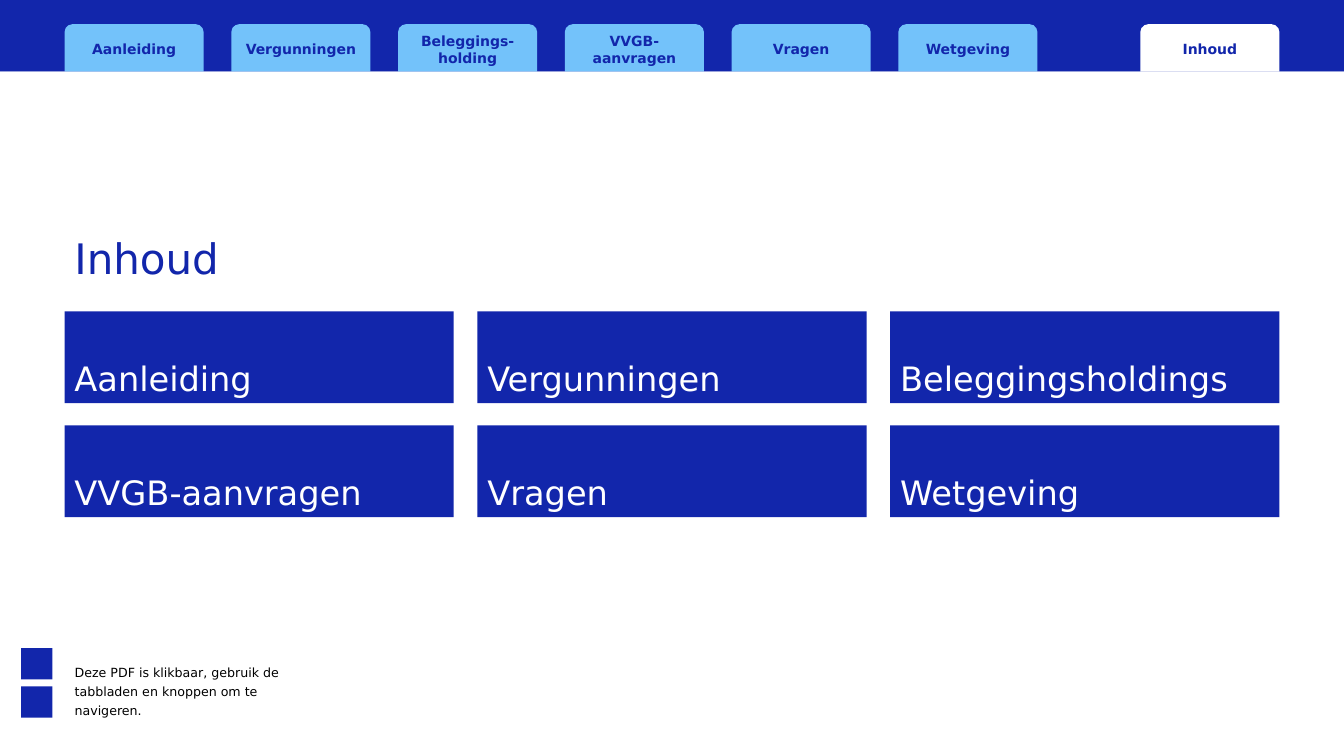
"""Build the clickable contents page with its tab bar and chapter buttons."""
from pptx import Presentation
from pptx.dml.color import RGBColor
from pptx.enum.shapes import MSO_SHAPE
from pptx.enum.text import MSO_ANCHOR, PP_ALIGN
from pptx.util import Inches, Pt

RECTANGLE = MSO_SHAPE.RECTANGLE
TAB_SHAPE = MSO_SHAPE.ROUND_2_SAME_RECTANGLE
MIDDLE, BOTTOM = MSO_ANCHOR.MIDDLE, MSO_ANCHOR.BOTTOM
LEFT, CENTER = PP_ALIGN.LEFT, PP_ALIGN.CENTER

TITLE = "Inhoud"
TABS = ["Aanleiding", "Vergunningen", "Beleggings-holding",
        "VVGB-aanvragen", "Vragen", "Wetgeving"]
CHAPTERS = [
    ["Aanleiding", "Vergunningen", "Beleggingsholdings"],
    ["VVGB-aanvragen", "Vragen", "Wetgeving"],
]
NOTE = "Deze PDF is klikbaar, gebruik de tabbladen en knoppen om te navigeren."


class Theme:
    """Colours, font and type sizes of the page."""
    font = "DejaVu Sans"
    blue = RGBColor(0x12, 0x26, 0xAB)
    sky = RGBColor(0x73, 0xC2, 0xFA)
    white = RGBColor(0xFF, 0xFF, 0xFF)
    black = RGBColor(0x00, 0x00, 0x00)
    title, chapter, tab, note = Pt(30), Pt(24), Pt(10), Pt(9)


PAGE_WIDTH, PAGE_HEIGHT = 13.33, 7.5
MARGIN, CONTENT_WIDTH = 0.64, 12.05
BAR_HEIGHT = 0.71
TAB_TOP, TAB_WIDTH, TAB_HEIGHT, TAB_STEP = 0.24, 1.38, 0.47, 1.654
CARD_TOP, CARD_WIDTH, CARD_HEIGHT, CARD_ROW_STEP = 3.09, 3.86, 0.91, 1.13
CARD_COLUMN_STEP = (CONTENT_WIDTH - CARD_WIDTH) / 2
MARK_LEFT, MARK_TOP, MARK_SIZE, MARK_STEP = 0.21, 6.43, 0.31, 0.38


def add_block(page, frame, fill, shape=RECTANGLE):
    """Add a filled shape without outline or shadow."""
    box = page.shapes.add_shape(shape, *map(Inches, frame))
    box.shadow.inherit = False
    box.fill.solid()
    box.fill.fore_color.rgb = fill
    box.line.fill.background()
    return box


def write(box, text, size, color, anchor=BOTTOM, align=LEFT, bold=False, spacing=1.0):
    """Write one paragraph in a box."""
    box.text_frame.word_wrap = True
    box.text_frame.vertical_anchor = anchor
    para = box.text_frame.paragraphs[0]
    para.alignment = align
    para.line_spacing = spacing
    span = para.add_run()
    span.text = text
    span.font.name = Theme.font
    span.font.size = size
    span.font.bold = bold
    span.font.color.rgb = color


def add_tab(page, left, label, fill):
    """Add one tab on the bar."""
    tab = add_block(page, (left, TAB_TOP, TAB_WIDTH, TAB_HEIGHT), fill, TAB_SHAPE)
    write(tab, label, Theme.tab, Theme.blue, MIDDLE, CENTER, bold=True)


def main():
    """Compose the page and save the deck."""
    deck = Presentation()
    deck.slide_width, deck.slide_height = Inches(PAGE_WIDTH), Inches(PAGE_HEIGHT)
    page = deck.slides.add_slide(deck.slide_layouts[6])

    add_block(page, (0, 0, PAGE_WIDTH, BAR_HEIGHT), Theme.blue)
    for index, label in enumerate(TABS):
        add_tab(page, MARGIN + index * TAB_STEP, label, Theme.sky)
    add_tab(page, MARGIN + CONTENT_WIDTH - TAB_WIDTH, TITLE, Theme.white)
    add_block(page, (0, BAR_HEIGHT, PAGE_WIDTH, PAGE_HEIGHT - BAR_HEIGHT), Theme.white)

    title = page.shapes.add_textbox(*map(Inches, (MARGIN, 2.1, CONTENT_WIDTH, 0.76)))
    write(title, TITLE, Theme.title, Theme.blue, spacing=0.9)

    for row, chapters in enumerate(CHAPTERS):
        for column, chapter in enumerate(chapters):
            left = MARGIN + column * CARD_COLUMN_STEP
            top = CARD_TOP + row * CARD_ROW_STEP
            card = add_block(page, (left, top, CARD_WIDTH, CARD_HEIGHT), Theme.blue)
            write(card, chapter, Theme.chapter, Theme.white)

    for index in range(2):
        top = MARK_TOP + index * MARK_STEP
        add_block(page, (MARK_LEFT, top, MARK_SIZE, MARK_SIZE), Theme.blue)

    note = page.shapes.add_textbox(*map(Inches, (0.74, MARK_TOP, 2.37, 0.69)))
    frame = note.text_frame
    frame.margin_left = frame.margin_top = frame.margin_right = frame.margin_bottom = 0
    write(note, NOTE, Theme.note, Theme.black, spacing=1.25)

    deck.save("out.pptx")


if __name__ == "__main__":
    main()
